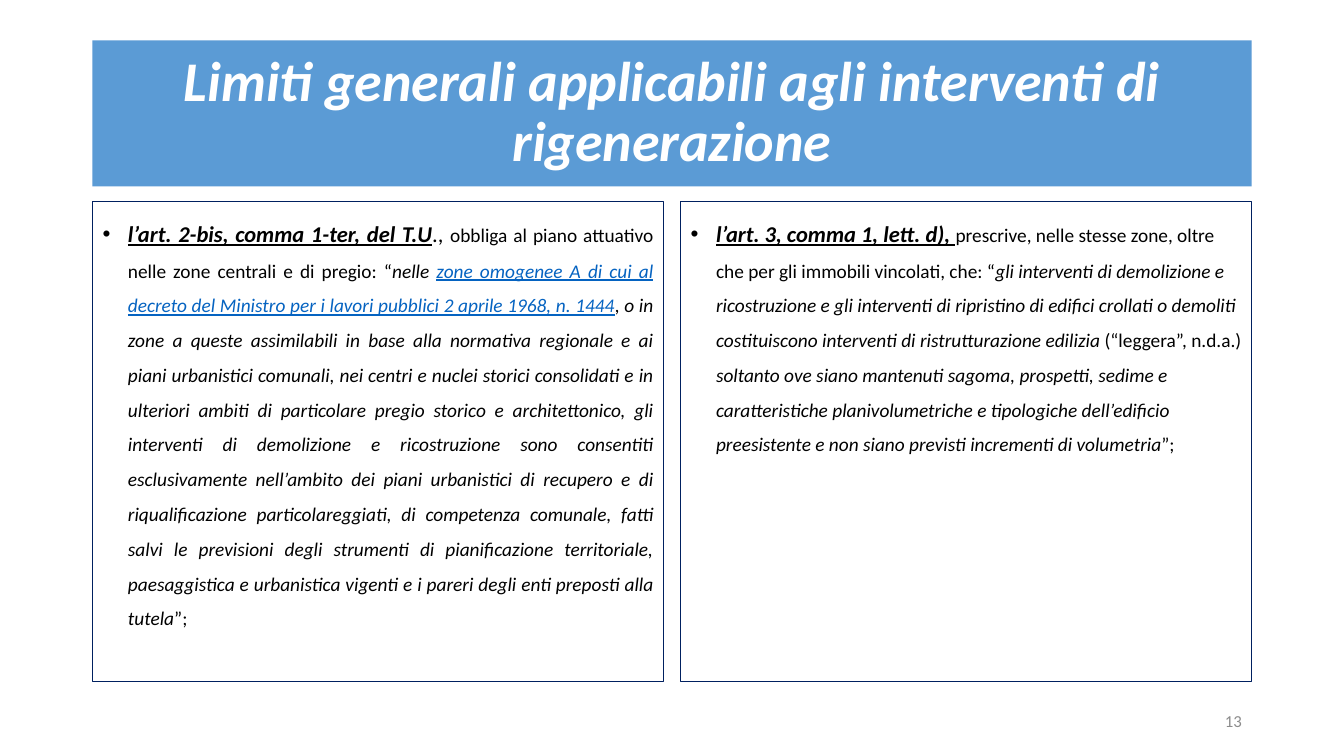
from pptx import Presentation
from pptx import util as u
from pptx.dml import color
from pptx.enum import text

LEFT, WIDTH, GAP = 2.33, 29.21, 0.43
COLUMN = (WIDTH - GAP) / 2
BLACK, LINK, NAVY = "000000", "0563C1", "002060"

LEFT_RUNS = [
    ("l’art. 2-bis, comma 1-ter, del T.U", 16.1, "biu", BLACK),
    ("., ", 16.1, "", BLACK),
    ("obbliga al piano attuativo nelle zone centrali e di pregio: “", 13.8, "", BLACK),
    ("nelle ", 13.8, "i", BLACK),
    ("zone omogenee A di cui al decreto del Ministro per i lavori pubblici "
     "2 aprile 1968, n. 1444", 13.8, "iu", LINK),
    (", o in zone a queste assimilabili in base alla normativa regionale e ai piani "
     "urbanistici comunali, nei centri e nuclei storici consolidati e in ulteriori ambiti "
     "di particolare pregio storico e architettonico, gli interventi di demolizione e "
     "ricostruzione sono consentiti esclusivamente nell’ambito dei piani urbanistici di "
     "recupero e di riqualificazione particolareggiati, di competenza comunale, fatti salvi "
     "le previsioni degli strumenti di pianificazione territoriale, paesaggistica e "
     "urbanistica vigenti e i pareri degli enti preposti alla tutela", 13.8, "i", BLACK),
    ("”;", 13.8, "", BLACK),
]
RIGHT_RUNS = [
    ("l’art. 3, comma 1, lett. d), ", 16.1, "biu", BLACK),
    ("prescrive, nelle stesse zone, oltre che per gli immobili vincolati, che: “",
     13.8, "", BLACK),
    ("gli interventi di demolizione e ricostruzione e gli interventi di ripristino di "
     "edifici crollati o demoliti costituiscono interventi di ristrutturazione edilizia",
     13.8, "i", BLACK),
    (" (“leggera”, n.d.a.) ", 13.8, "", BLACK),
    ("soltanto ove siano mantenuti sagoma, prospetti, sedime e caratteristiche "
     "planivolumetriche e tipologiche dell’edificio preesistente e non siano previsti "
     "incrementi di volumetria", 13.8, "i", BLACK),
    ("”;", 13.8, "", BLACK),
]


def rgb(value):
    return color.RGBColor.from_string(value)


def place(sp, left, top, width, height):
    sp.left, sp.top, sp.width, sp.height = map(u.Cm, (left, top, width, height))


def setup_frame(sp, anchor):
    tf = sp.text_frame
    tf.word_wrap = True
    tf.auto_size = text.MSO_AUTO_SIZE.NONE
    tf.vertical_anchor = anchor
    return tf


def format_run(r, size, style, colour):
    r.font.name = "Calibri"
    r.font.size = u.Pt(size)
    r.font.bold = "b" in style
    r.font.italic = "i" in style
    r.font.underline = "u" in style
    r.font.color.rgb = rgb(colour)


def add_line(sp, content, align, size, style, colour):
    tf = setup_frame(sp, text.MSO_ANCHOR.MIDDLE)
    tf.text = content
    p = tf.paragraphs[0]
    p.alignment = align
    format_run(p.runs[0], size, style, colour)
    return p


def fill_title(sp):
    place(sp, LEFT, 1.02, WIDTH, 3.68)
    sp.fill.solid()
    sp.fill.fore_color.rgb = rgb("5B9BD5")
    p = add_line(sp, "Limiti generali applicabili agli interventi di rigenerazione",
                 text.PP_ALIGN.CENTER, 40, "bi", "FFFFFF")
    p.line_spacing = 0.9


def fill_column(sp, index, runs, align):
    place(sp, LEFT + index * (COLUMN + GAP), 5.08, COLUMN, 12.09)
    sp.line.color.rgb = rgb(NAVY)
    sp.line.width = u.Pt(0.75)
    p = setup_frame(sp, text.MSO_ANCHOR.TOP).paragraphs[0]
    p.alignment = align
    p.line_spacing = 1.5
    p.space_before = u.Pt(10)
    pPr = p._p.get_or_add_pPr()
    indent = u.Cm(0.64)
    pPr.set("marL", str(indent))
    pPr.set("indent", str(-indent))
    for content, size, style, colour in runs:
        r = p.add_run()
        r.text = content
        format_run(r, size, style, colour)


def add_page_number(s, number):
    sp = s.shapes.add_textbox(u.Cm(23.93), u.Cm(17.65), u.Cm(7.62), u.Cm(1.02))
    add_line(sp, number, text.PP_ALIGN.RIGHT, 12, "", "8C8C8C")


def main():
    prs = Presentation()
    prs.slide_width, prs.slide_height = u.Cm(33.87), u.Cm(19.05)
    s = prs.slides.add_slide(prs.slide_layouts[3])
    title, left, right = s.placeholders
    fill_title(title)
    fill_column(left, 0, LEFT_RUNS, text.PP_ALIGN.JUSTIFY)
    fill_column(right, 1, RIGHT_RUNS, text.PP_ALIGN.LEFT)
    add_page_number(s, "13")
    prs.save("out.pptx")


if __name__ == "__main__":
    main()
